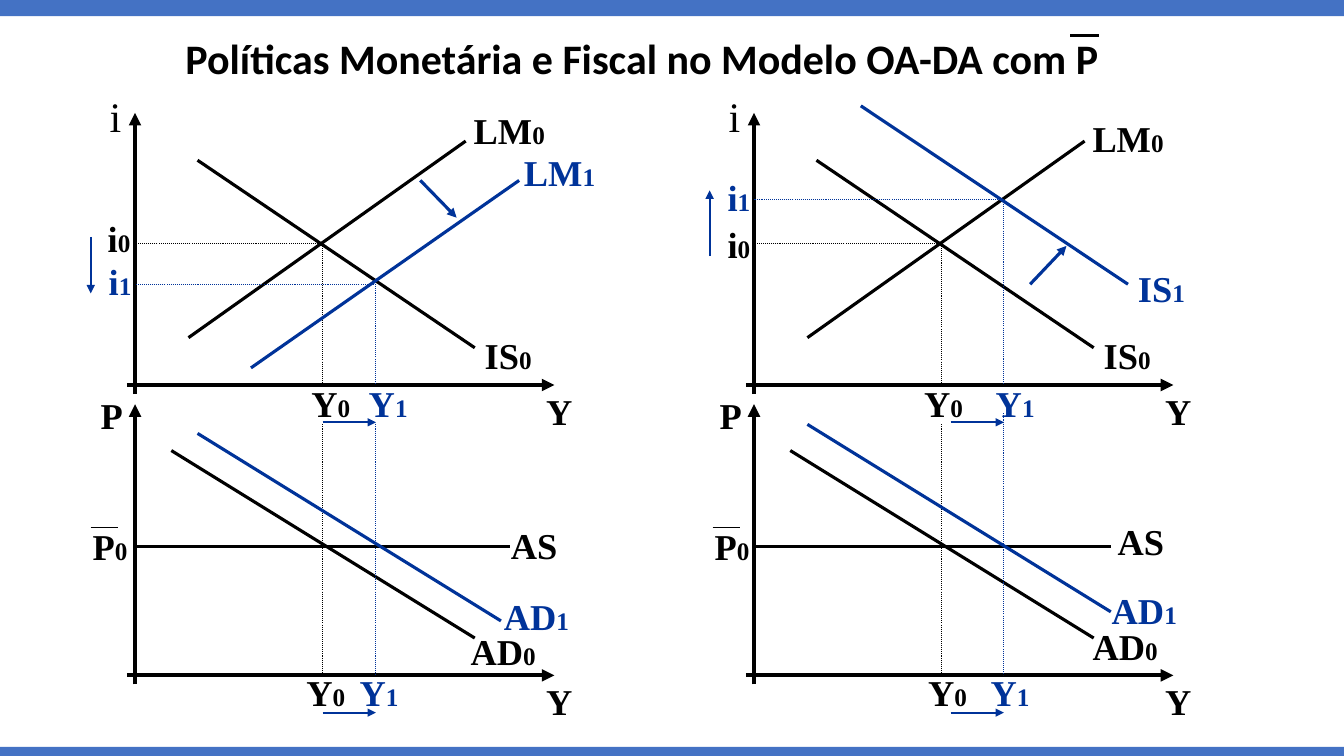
from lxml import etree
from pptx import Presentation
from pptx.dml.color import RGBColor
from pptx.enum.dml import MSO_LINE
from pptx.enum.shapes import MSO_CONNECTOR, MSO_SHAPE
from pptx.enum.text import MSO_ANCHOR, MSO_AUTO_SIZE, PP_ALIGN
from pptx.oxml.ns import qn
from pptx.util import Cm, Pt

RECTANGLE = MSO_SHAPE.RECTANGLE
STRAIGHT = MSO_CONNECTOR.STRAIGHT
DOTTED = MSO_LINE.ROUND_DOT
TOP = MSO_ANCHOR.TOP
LEFT = PP_ALIGN.LEFT
NO_AUTOFIT = MSO_AUTO_SIZE.NONE
RGB = RGBColor.from_string
BLACK, BLUE, BAR = "000000", "003399", "4472C4"
INCH = 2.54
PANEL_STEP = 6.14

prs = Presentation()
prs.slide_width, prs.slide_height = Cm(13.333 * INCH), Cm(7.5 * INCH)
s = prs.slides.add_slide(prs.slide_layouts[5])


def add_line(x1, y1, x2, y2, color=BLACK, width=2.25, arrow=False, dotted=False):
    ends = [Cm(v * INCH) for v in (x1, y1, x2, y2)]
    cx = s.shapes.add_connector(STRAIGHT, *ends)
    cx.line.color.rgb = RGB(color)
    cx.line.width = Pt(width)
    if dotted:
        cx.line.dash_style = DOTTED
    if arrow:
        ln = cx.line._get_or_add_ln()
        etree.SubElement(ln, qn("a:tailEnd"), type="triangle")
    etree.SubElement(cx._element.spPr, qn("a:effectLst"))


def add_label(text, sub, x, y, w=0.88, color=BLACK, size=26, bold=True):
    tb = s.shapes.add_textbox(*[Cm(v * INCH) for v in (x, y, w, 0.54)])
    tf = tb.text_frame
    tf.word_wrap = True
    p = tf.paragraphs[0]
    p.font.name = "Times New Roman"
    p.font.bold = bold
    p.font.color.rgb = RGB(color)
    for part, points in ((text, size), (sub, 18)):
        if part:
            r = p.add_run()
            r.text = part
            r.font.size = Pt(points)


for y, h in ((0, 0.16), (7.41, 0.09)):
    sp = s.shapes.add_shape(RECTANGLE, 0, Cm(y * INCH), prs.slide_width, Cm(h * INCH))
    sp.shadow.inherit = False
    sp.fill.solid()
    sp.fill.fore_color.rgb = RGB(BAR)
    sp.line.fill.background()

title = s.shapes.title
title.left, title.top = Cm(1.74 * INCH), Cm(0.27 * INCH)
title.width, title.height = Cm(9.83 * INCH), Cm(0.68 * INCH)
tf = title.text_frame
tf.text = "Políticas Monetária e Fiscal no Modelo OA-DA com P"
tf.word_wrap = True
tf.auto_size = NO_AUTOFIT
tf.vertical_anchor = TOP
p = tf.paragraphs[0]
p.alignment = LEFT
p.font.name = "Calibri"
p.font.size = Pt(30)
p.font.bold = True
p.font.color.rgb = RGB(BLACK)
add_line(10.62, 0.35, 10.9, 0.35)

for dx in (0, PANEL_STEP):
    for bottom, top, axis in ((3.91, 1.12, 3.82), (6.79, 4.01, 6.7)):
        add_line(1.34 + dx, bottom, 1.34 + dx, top, width=3, arrow=True)
        add_line(1.26 + dx, axis, 5.5 + dx, axis, width=3, arrow=True)
        add_label("Y", "", 5.32 + dx, axis - 0.01, 0.62)
    for x1, y1, x2, y2 in ((1.96, 1.59, 4.71, 3.45), (1.87, 3.35, 4.62, 1.4),
                           (1.7, 4.47, 4.71, 6.33)):
        add_line(x1 + dx, y1, x2 + dx, y2)
    for x1, y1, x2, y2 in ((3.2, 2.42, 3.2, 3.82), (3.2, 2.42, 1.34, 2.42),
                           (3.2, 4.21, 3.2, 6.72)):
        add_line(x1 + dx, y1, x2 + dx, y2, width=0.75, dotted=True)
    add_label("i", "", 0.99 + dx, 0.85, 0.35, size=30, bold=False)
    add_label("P", "", 0.9 + dx, 3.85, 0.62)
    add_label("IS", "0", 4.71 + dx, 3.26)

for text, sub, x, y in (
    ("LM", "0", 4.6, 1.02), ("AD", "0", 4.57, 6.19), ("AS", "", 4.97, 5.14),
    ("Y", "0", 2.99, 3.73), ("Y", "0", 2.94, 6.6),
    ("P", "0", 0.82, 5.15), ("i", "0", 0.97, 2.1),
    ("LM", "0", 10.74, 1.1), ("AD", "0", 10.74, 6.14), ("AS", "", 10.99, 5.1),
    ("Y", "0", 9.07, 3.73), ("Y", "0", 9.11, 6.6),
    ("P", "0", 6.99, 5.15), ("i", "0", 7.12, 2.15),
):
    add_label(text, sub, x, y, 0.97)

for text, x, y in (
    ("LM", 5.1, 1.44), ("AD", 4.9, 5.85), ("i", 0.98, 2.52),
    ("Y", 3.56, 3.73), ("Y", 3.47, 6.6),
    ("IS", 11.19, 2.59), ("AD", 10.93, 5.79), ("i", 7.12, 1.69),
    ("Y", 9.78, 3.73), ("Y", 9.73, 6.6),
):
    add_label(text, "1", x, y, 0.97, BLUE)

for axis_x, as_end, bar_x, y1_x, rate, lower_top in (
    (1.34, 5.06, 0.9, 3.73, 2.82, 4.21),
    (7.48, 11.02, 7.07, 9.96, 1.98, 4.1),
):
    add_line(y1_x, rate, y1_x, 3.82, BLUE, 0.75, dotted=True)
    add_line(y1_x, rate, axis_x, rate, BLUE, 0.75, dotted=True)
    add_line(y1_x, lower_top, y1_x, 6.7, BLUE, 0.75, dotted=True)
    add_line(axis_x, 5.42, as_end, 5.42)
    add_line(bar_x, 5.23, bar_x + 0.27, 5.23, width=0.75)
    for y in (4.19, 7.07):
        add_line(y1_x - 0.53, y, y1_x, y, BLUE, 1.5, arrow=True)

for x1, y1, x2, y2 in ((2.49, 3.65, 5.15, 1.79), (1.96, 4.3, 4.97, 6.16),
                       (8.54, 1.05, 11.19, 2.82), (8.01, 4.21, 11.02, 6.07)):
    add_line(x1, y1, x2, y2, BLUE)

for x1, y1, x2, y2, width in ((4.17, 1.79, 4.53, 2.16, 2.25), (0.9, 2.35, 0.9, 2.91, 1.5),
                              (10.22, 2.82, 10.58, 2.44, 2.25), (7.04, 2.54, 7.04, 1.89, 1.5)):
    add_line(x1, y1, x2, y2, BLUE, width, arrow=True)

prs.save("out.pptx")
